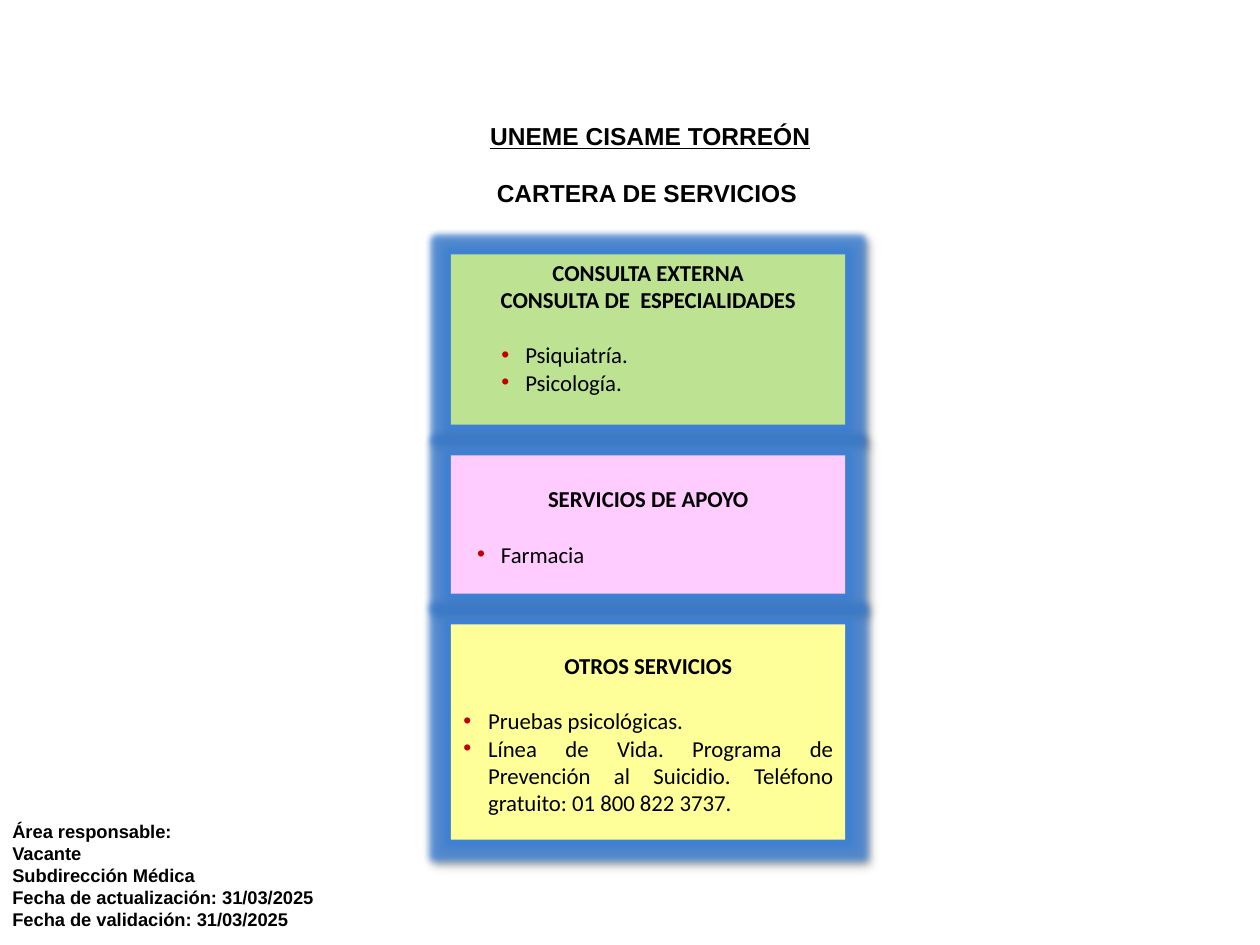
from lxml import etree
from pptx import Presentation
from pptx.dml.color import RGBColor
from pptx.enum.shapes import MSO_SHAPE
from pptx.enum.text import MSO_ANCHOR, MSO_AUTO_SIZE, PP_ALIGN
from pptx.oxml import parse_xml
from pptx.oxml.ns import nsdecls, qn
from pptx.util import Cm, Pt

RECT = MSO_SHAPE.RECTANGLE
TOP = MSO_ANCHOR.TOP
NO_FIT, GROW = MSO_AUTO_SIZE.NONE, MSO_AUTO_SIZE.SHAPE_TO_FIT_TEXT
LEFT, CENTER, JUSTIFY = PP_ALIGN.LEFT, PP_ALIGN.CENTER, PP_ALIGN.JUSTIFY

EFFECTS = f"""<a:effectLst {nsdecls('a')}>
<a:glow rad="101600"><a:srgbClr val="3B7FD4"><a:alpha val="80000"/></a:srgbClr></a:glow>
<a:outerShdw blurRad="50800" dist="38100" dir="2700000">
<a:srgbClr val="000000"><a:alpha val="40000"/></a:srgbClr></a:outerShdw>
</a:effectLst>"""


def color(hex_str):
    return RGBColor.from_string(hex_str)


class Deck:
    heading_font, body_font = "Arial", "Calibri"
    ink, bullet_color = "000000", "C00000"
    title_size, body_size, note_size = 14, 13, 10.5
    blank_line = 16

    def __init__(self):
        self.prs = Presentation()
        self.prs.slide_width, self.prs.slide_height = Cm(25.4), Cm(19.05)
        self.s = self.prs.slides.add_slide(self.prs.slide_layouts[5])

    def paragraph(self, tf, i, text, font, size, bold=True, align=LEFT, before=0):
        p = tf.paragraphs[0] if i == 0 else tf.add_paragraph()
        p.alignment = align
        p.space_before = Pt(before)
        r = p.add_run()
        r.text = text
        r.font.name, r.font.size, r.font.bold = font, Pt(size), bold
        r.font.color.rgb = color(self.ink)
        return p

    def bullet(self, p, indent, hang):
        pPr = p._p.get_or_add_pPr()
        pPr.set("marL", str(Cm(indent)))
        pPr.set("indent", str(-Cm(hang)))
        clr = etree.SubElement(pPr, qn("a:buClr"))
        etree.SubElement(clr, qn("a:srgbClr"), val=self.bullet_color)
        etree.SubElement(pPr, qn("a:buFont"), typeface="Arial")
        etree.SubElement(pPr, qn("a:buChar"), char="•")

    def title(self, name, subtitle):
        sp = self.s.shapes.title
        sp.left, sp.top, sp.width, sp.height = Cm(2.11), Cm(1.73), Cm(22), Cm(2.54)
        tf = sp.text_frame
        tf.auto_size, tf.vertical_anchor, tf.margin_top = NO_FIT, TOP, Cm(0.71)
        style = (self.heading_font, self.title_size, True, CENTER)
        p = self.paragraph(tf, 0, name, *style)
        p.runs[0].font.underline = True
        self.paragraph(tf, 1, subtitle, *style, before=self.blank_line)

    def service_box(self, top, height, fill, inset, headings, items, indent, hang, align):
        sp = self.s.shapes.add_shape(RECT, Cm(9.09), Cm(top), Cm(7.95), Cm(height))
        sp.fill.solid()
        sp.fill.fore_color.rgb = color(fill)
        sp.line.fill.background()
        sp._element.spPr.append(parse_xml(EFFECTS))
        tf = sp.text_frame
        tf.word_wrap, tf.vertical_anchor, tf.margin_top = True, TOP, Cm(inset)
        for i, text in enumerate(headings):
            self.paragraph(tf, i, text, self.body_font, self.body_size, align=CENTER)
        for i, text in enumerate(items):
            p = self.paragraph(tf, len(headings) + i, text, self.body_font, self.body_size,
                               False, align, 0 if i else self.blank_line)
            self.bullet(p, indent, hang)

    def note(self, lines):
        tf = self.s.shapes.add_textbox(0, Cm(16.41), Cm(9.4), Cm(2.49)).text_frame
        tf.word_wrap, tf.auto_size = True, GROW
        for i, text in enumerate(lines):
            self.paragraph(tf, i, text, self.heading_font, self.note_size)


def main():
    deck = Deck()
    deck.title("UNEME CISAME TORREÓN", "CARTERA DE SERVICIOS ")

    # height, fill, top inset, headings, items, indent, hanging, item alignment
    boxes = [
        (3.43, "BCE292", 0.08, ["CONSULTA EXTERNA", "CONSULTA DE  ESPECIALIDADES"],
         ["Psiquiatría.", "Psicología."], 1.25, 0.48, LEFT),
        (2.79, "FFCCFF", 0.6, ["SERVICIOS DE APOYO"], ["Farmacia"], 0.76, 0.48, LEFT),
        (4.34, "FFFF99", 0.55, ["OTROS SERVICIOS"],
         ["Pruebas psicológicas.",
          "Línea de Vida. Programa de Prevención al Suicidio. "
          "Teléfono gratuito: 01 800 822 3737."], 0.5, 0.5, JUSTIFY),
    ]
    top, gap = 5.13, 0.62
    for box in boxes:
        deck.service_box(top, *box)
        top += box[0] + gap

    deck.note(["Área responsable:", "Vacante", "Subdirección Médica",
               "Fecha de actualización: 31/03/2025", "Fecha de validación: 31/03/2025"])
    deck.prs.save("out.pptx")


if __name__ == "__main__":
    main()
